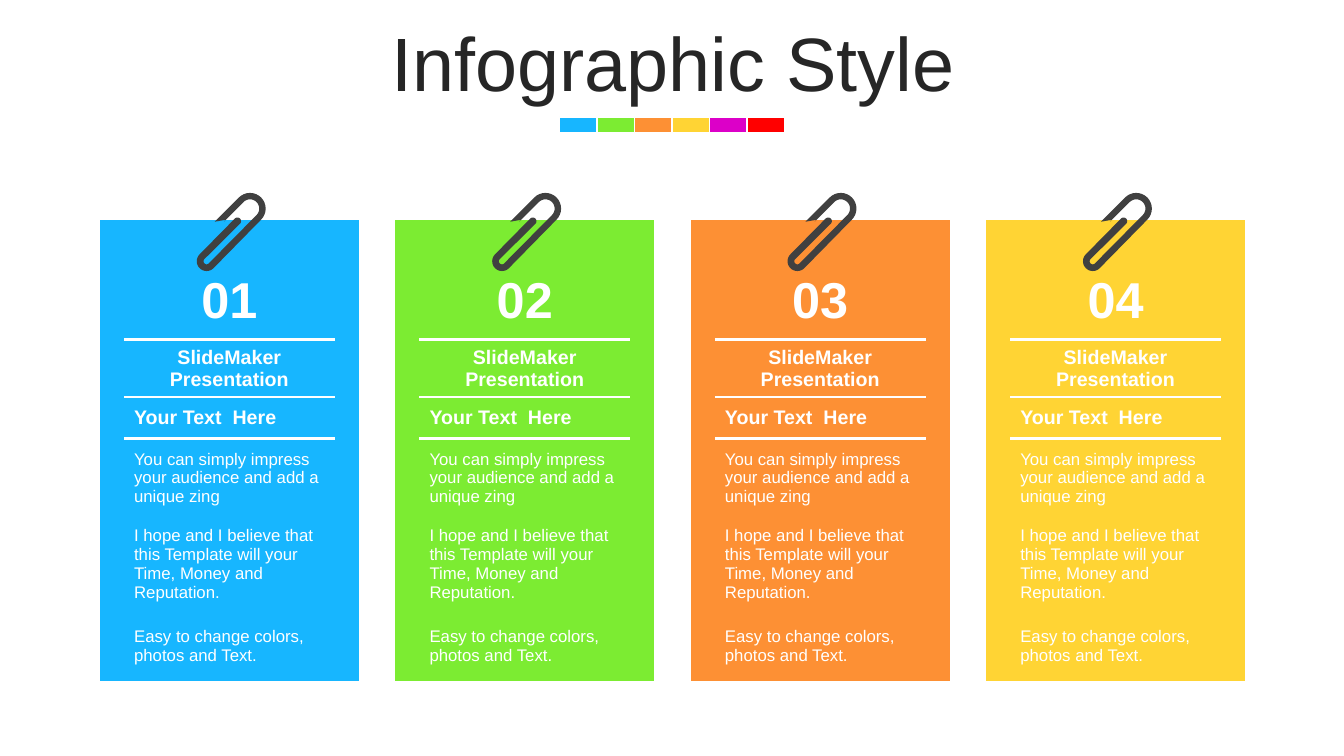
"""Build a slide of four clipped cards under a title and a colour strip."""
from dataclasses import dataclass
from math import cos, radians, sin
from typing import Any

from lxml.etree import SubElement
from pptx import Presentation
from pptx.dml.color import RGBColor
from pptx.enum.shapes import MSO_SHAPE
from pptx.enum.text import MSO_ANCHOR, PP_ALIGN
from pptx.oxml.ns import qn
from pptx.util import Pt


@dataclass(frozen=True)
class Theme:
    font: str = "Arial"
    hues: tuple[str, ...] = ("17B6FF", "7CEC32", "FD9034", "FFD434", "DC00C8", "FF0000")
    white: str = "FFFFFF"
    ink: str = "262626"
    clip: str = "404040"
    title: float = 54
    number: float = 36
    head: float = 14
    body: float = 12
    rule: float = 2.25
    edge: float = 1


@dataclass(frozen=True)
class Row:
    height: float
    text: str = ""
    size: float = 0
    bold: bool = False
    align: PP_ALIGN = PP_ALIGN.LEFT
    rules: tuple[str, ...] = ()


@dataclass(frozen=True)
class Card:
    left: float
    number: str
    hue: str


@dataclass(frozen=True)
class Arc:
    x: float
    y: float
    radius: float
    start: int
    sweep: int


THEME = Theme()
TOP = 157
COLUMNS = (17.3, 150.5, 16.6)
ROWS = (
    Row(30.2),
    Row(55.4, "{number}", THEME.number, True, PP_ALIGN.CENTER, ("lnB",)),
    Row(41, "SlideMaker Presentation", THEME.head, True, PP_ALIGN.CENTER, ("lnT", "lnB")),
    Row(29.5, "Your Text  Here", THEME.head, True, rules=("lnT",)),
    Row(56.9, "You can simply impress your audience and add a unique zing", THEME.body),
    Row(66.2, "I hope and I believe that this Template will your Time, Money and Reputation.",
        THEME.body),
    Row(50.4, "Easy to change colors, photos and Text.", THEME.body),
)
CARDS = [Card(71.3 + 211 * i, f"{i + 1:02}", hue) for i, hue in enumerate(THEME.hues[:4])]
ARCS = (
    Arc(107.3, 149, 11.2, -135, 180),
    Arc(76.3, 186.6, 7, 45, 180),
    Arc(98.3, 158, 2.6, -135, 180),
    Arc(76.3, 186.6, 2.2, 225, -180),
    Arc(107.3, 149, 6.6, 45, -180),
)
NOTCH = ((88.6, 158.4), (90, 157), (82.1, 158.4))
PLAIN = "{2D5ABB26-0587-4C30-8999-92F81FD0307C}"


def apply(thing: Any, values: dict[str, Any]) -> None:
    for name, value in values.items():
        setattr(thing, name, value)


def paint(thing: Any, hue: str) -> None:
    thing.fill.solid()
    thing.fill.fore_color.rgb = RGBColor.from_string(hue)


def write(frame: Any, text: str, hue: str, font: dict[str, Any], para: dict[str, Any]) -> None:
    line = frame.paragraphs[0]
    apply(line, para)
    run = line.add_run()
    run.text = text
    apply(run.font, {"name": THEME.font, **font})
    run.font.color.rgb = RGBColor.from_string(hue)


def add_title(shapes: Any) -> None:
    frame = shapes.add_textbox(Pt(25.2), Pt(17.3), Pt(911.5), Pt(56.9)).text_frame
    apply(frame, {"word_wrap": True, "vertical_anchor": MSO_ANCHOR.MIDDLE,
                  "margin_top": Pt(7.2), "margin_bottom": Pt(3.6)})
    write(frame, "Infographic Style", THEME.ink, {"size": Pt(THEME.title)},
          {"alignment": PP_ALIGN.CENTER, "line_spacing": 0.9, "space_before": Pt(10)})


def add_strip(shapes: Any) -> None:
    for i, hue in enumerate(THEME.hues):
        bar = shapes.add_shape(MSO_SHAPE.RECTANGLE, Pt(399.6 + 26.8 * i), Pt(83.5), Pt(27), Pt(11.5))
        bar.shadow.inherit = False
        paint(bar, hue)
        bar.line.width = Pt(THEME.edge)
        bar.line.color.rgb = RGBColor.from_string(THEME.white)


def add_rule(cell: Any, side: str) -> None:
    props = cell._tc.get_or_add_tcPr()
    line = SubElement(props, qn(f"a:{side}"), w=str(Pt(THEME.rule)))
    fill = SubElement(line, qn("a:solidFill"))
    SubElement(fill, qn("a:srgbClr"), val=THEME.white)


def add_card(shapes: Any, card: Card) -> None:
    frame = shapes.add_table(len(ROWS), len(COLUMNS), Pt(card.left), Pt(TOP),
                             Pt(sum(COLUMNS)), Pt(sum(row.height for row in ROWS)))
    frame.element.xpath(".//a:tableStyleId")[0].text = PLAIN
    table = frame.table
    apply(table, {"first_row": False, "horz_banding": False})
    for column, width in zip(table.columns, COLUMNS):
        column.width = Pt(width)
    for i, row in enumerate(ROWS):
        table.rows[i].height = Pt(row.height)
        mid = table.cell(i, 1)
        for side in row.rules:
            add_rule(mid, side)
        for j in range(len(COLUMNS)):
            paint(table.cell(i, j), card.hue)
        if row.text:
            mid.vertical_anchor = MSO_ANCHOR.MIDDLE
            write(mid.text_frame, row.text.format(number=card.number), THEME.white,
                  {"size": Pt(row.size), "bold": row.bold}, {"alignment": row.align})


def trace(arc: Arc, steps: int = 16) -> list[tuple[float, float]]:
    turns = [radians(arc.start + arc.sweep * i / steps) for i in range(steps + 1)]
    return [(arc.x + arc.radius * cos(turn), arc.y + arc.radius * sin(turn)) for turn in turns]


def add_clip(shapes: Any, left: float) -> None:
    dots = [dot for arc in ARCS for dot in trace(arc)] + list(NOTCH)
    first, *rest = [(Pt(left + x), Pt(y)) for x, y in dots]
    pen = shapes.build_freeform(*first)
    pen.add_line_segments(rest, close=True)
    clip = pen.convert_to_shape()
    clip.shadow.inherit = False
    paint(clip, THEME.clip)
    clip.line.fill.background()


def main() -> None:
    deck = Presentation()
    apply(deck, {"slide_width": Pt(960), "slide_height": Pt(540)})
    shapes = deck.slides.add_slide(deck.slide_layouts[6]).shapes
    add_strip(shapes)
    add_title(shapes)
    for card in CARDS:
        add_card(shapes, card)
        add_clip(shapes, card.left)
    deck.save("out.pptx")


if __name__ == "__main__":
    main()
